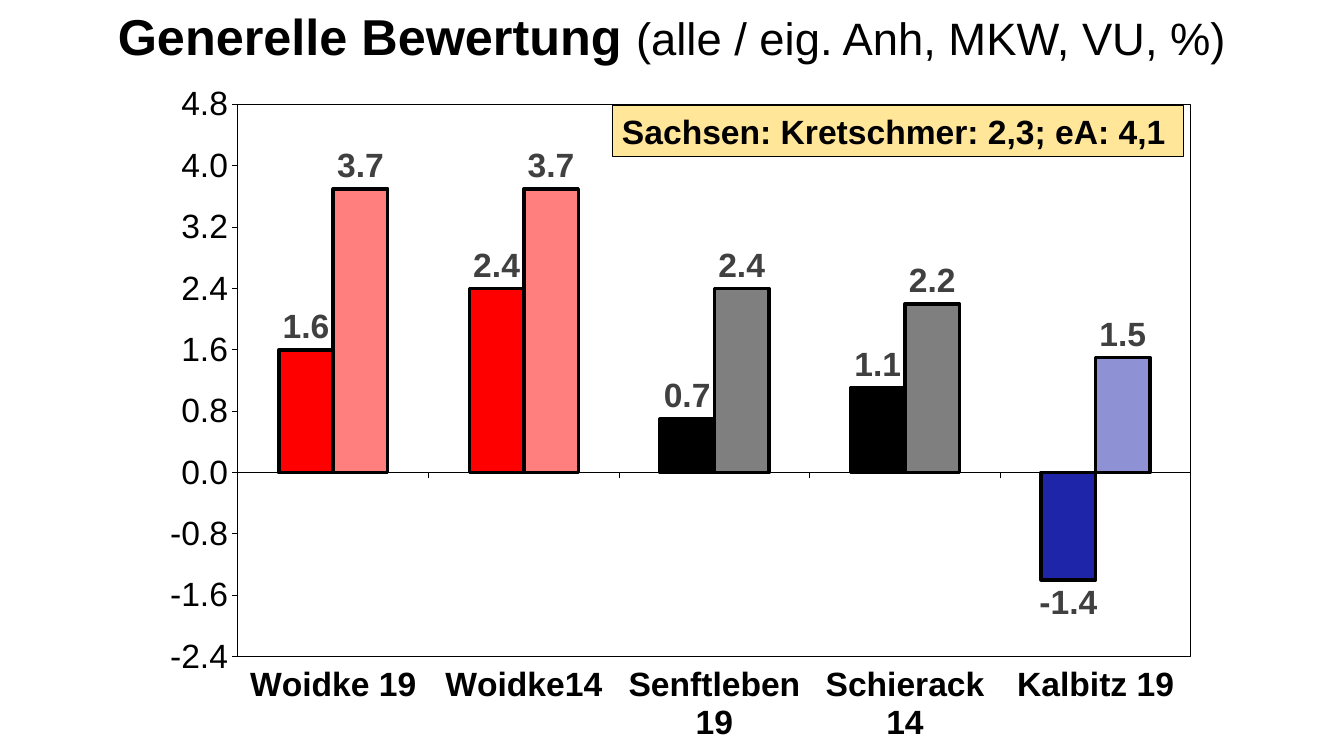
"""Build a slide with a bar chart of the ratings of top candidates."""
from dataclasses import dataclass
from typing import Any

from lxml.etree import SubElement as Sub
from pptx import Presentation
from pptx.chart.data import CategoryChartData as Data
from pptx.dml.color import RGBColor as Rgb
from pptx.enum.chart import XL_CHART_TYPE as Kind
from pptx.enum.chart import XL_LABEL_POSITION as Spot
from pptx.enum.chart import XL_TICK_LABEL_POSITION as Side
from pptx.enum.chart import XL_TICK_MARK as Tick
from pptx.enum.shapes import MSO_SHAPE as Form
from pptx.enum.text import MSO_ANCHOR as Anchor
from pptx.enum.text import MSO_AUTO_SIZE as Fit
from pptx.enum.text import PP_ALIGN as Align
from pptx.oxml import parse_xml as to_xml
from pptx.oxml.ns import nsdecls, qn
from pptx.util import Inches, Pt

WIDE, HIGH = Inches(13.33), Inches(7.5)
HUES = {"ink": "000000", "red": "FF0000", "blue": "1E25A8",
        "label": "404040", "note": "FFE699"}
FACE = {"name": "Arial", "size": Pt(24)}
BOLD = FACE | {"bold": True}


@dataclass(frozen=True)
class Box:
    """Place and size in percent of the slide."""
    left: float
    top: float
    width: float
    height: float

    def place(self) -> dict[str, int]:
        """Give the box in slide units."""
        return {"left": int(WIDE * self.left / 100),
                "top": int(HIGH * self.top / 100),
                "width": int(WIDE * self.width / 100),
                "height": int(HIGH * self.height / 100)}


@dataclass(frozen=True)
class Group:
    """One candidate with both ratings."""
    name: str
    all: float
    own: float
    hue: str


HEAD = Box(0, 1.6, 100, 7.87)
GRAPH = Box(11.1, 9.6, 79.14, 90.4)
NOTE = Box(45.54, 14, 42.54, 6.67)
PLOT = {"x": 0.0835, "y": 0.0467, "w": 0.896, "h": 0.808}
GROUPS = [
    Group("Woidke 19", 1.6, 3.7, "red"),
    Group("Woidke14", 2.4, 3.7, "red"),
    Group("Senftleben 19", 0.7, 2.4, "ink"),
    Group("Schierack 14", 1.1, 2.2, "ink"),
    Group("Kalbitz 19", -1.4, 1.5, "blue"),
]


def tune(item: Any, form: dict[str, Any]) -> None:
    """Set each format value on the item."""
    for key, value in form.items():
        setattr(item, key, value)


def ink(font: Any, form: dict[str, Any], hue: str = "ink") -> None:
    """Format a font and give it a colour."""
    tune(font, form)
    font.color.rgb = Rgb.from_string(HUES[hue])


def fill(item: Any, hue: str) -> None:
    """Fill an item with one colour."""
    item.fill.solid()
    item.fill.fore_color.rgb = Rgb.from_string(HUES[hue])


def edge(line: Any, width: float) -> None:
    """Draw a black line."""
    line.color.rgb = Rgb.from_string(HUES["ink"])
    line.width = Pt(width)


def add_head(slide: Any) -> None:
    """Fill and format the title."""
    head = slide.shapes.title
    tune(head, HEAD.place())
    tune(head.text_frame, {"vertical_anchor": Anchor.BOTTOM,
                           "auto_size": Fit.NONE, "word_wrap": True})
    para = head.text_frame.paragraphs[0]
    tune(para, {"alignment": Align.CENTER, "line_spacing": 0.9})
    for text, size, bold in (("Generelle Bewertung ", 36, True),
                             ("(alle / eig. Anh, MKW, VU, %)", 32.4, False)):
        run = para.add_run()
        run.text = text
        ink(run.font, FACE | {"size": Pt(size), "bold": bold})


def add_bars(chart: Any) -> None:
    """Format the bars and their labels."""
    plot = chart.plots[0]
    tune(plot, {"gap_width": 150, "overlap": 0, "vary_by_categories": False})
    for row, faint in zip(plot.series, (False, True)):
        row.invert_if_negative = False
        for at, group in enumerate(GROUPS):
            form = row.points[at].format
            fill(form, group.hue)
            edge(form.line, 2.5)
            if faint:
                tone = form.fill._xPr.find(qn("a:solidFill"))[0]
                Sub(tone, qn("a:alpha"), val="50000")
        tune(row.data_labels, {
            "show_value": True, "position": Spot.OUTSIDE_END,
            "number_format": "0.0", "number_format_is_linked": False})
        ink(row.data_labels.font, BOLD, "label")
    for mark in chart._chartSpace.iter(qn("c:dPt")):
        mark[0].addnext(to_xml(
            f'<c:invertIfNegative {nsdecls("c")} val="0"/>'))


def add_axes(chart: Any) -> None:
    """Format both axes."""
    names, scale = chart.category_axis, chart.value_axis
    for axis, face in ((names, BOLD), (scale, FACE | {"bold": False})):
        tune(axis, {"has_major_gridlines": False,
                    "major_tick_mark": Tick.OUTSIDE,
                    "minor_tick_mark": Tick.NONE})
        ink(axis.tick_labels.font, face)
        edge(axis.format.line, 0.75)
    names.tick_label_position = Side.LOW
    tune(scale, {"minimum_scale": -2.4, "maximum_scale": 4.8,
                 "major_unit": 0.8})
    tune(scale.tick_labels, {"number_format": "0.0",
                             "number_format_is_linked": False})


def frame(chart: Any) -> None:
    """Place the plot area and draw its border."""
    area = chart._chartSpace.chart.plotArea
    for old in area.findall(qn("c:layout")):
        area.remove(old)
    rules = {"layoutTarget": "inner", "xMode": "edge", "yMode": "edge"} | PLOT
    parts = "".join(f'<c:{key} val="{val}"/>' for key, val in rules.items())
    area.insert(0, to_xml(
        f'<c:layout {nsdecls("c")}><c:manualLayout>{parts}'
        '</c:manualLayout></c:layout>'))
    area.append(to_xml(
        f'<c:spPr {nsdecls("c", "a")}><a:noFill/><a:ln w="{Pt(0.75)}">'
        f'<a:solidFill><a:srgbClr val="{HUES["ink"]}"/></a:solidFill>'
        '</a:ln></c:spPr>'))


def add_graph(slide: Any) -> None:
    """Add the chart of ratings."""
    data = Data(number_format="0.0")
    data.categories = [group.name for group in GROUPS]
    data.add_series("Alle", [group.all for group in GROUPS])
    data.add_series("Eig. Anh", [group.own for group in GROUPS])
    chart = slide.shapes.add_chart(
        Kind.COLUMN_CLUSTERED, *GRAPH.place().values(), data).chart
    tune(chart, {"has_title": False, "has_legend": False})
    ink(chart.font, {"name": "Calibri", "size": Pt(10)})
    add_bars(chart)
    add_axes(chart)
    frame(chart)


def add_note(slide: Any) -> None:
    """Add the note on Saxony."""
    note = slide.shapes.add_shape(Form.RECTANGLE, *NOTE.place().values())
    note.shadow.inherit = False
    fill(note, "note")
    edge(note.line, 0.75)
    tune(note.text_frame, {"word_wrap": True, "vertical_anchor": Anchor.TOP,
                           "auto_size": Fit.SHAPE_TO_FIT_TEXT})
    para = note.text_frame.paragraphs[0]
    para.alignment = Align.LEFT
    run = para.add_run()
    run.text = "Sachsen: Kretschmer: 2,3; eA: 4,1"
    ink(run.font, BOLD)


def main() -> None:
    """Build and save the slide."""
    deck = Presentation()
    tune(deck, {"slide_width": WIDE, "slide_height": HIGH})
    slide = deck.slides.add_slide(deck.slide_layouts[5])
    add_head(slide)
    add_graph(slide)
    add_note(slide)
    deck.save("out.pptx")


if __name__ == "__main__":
    main()
